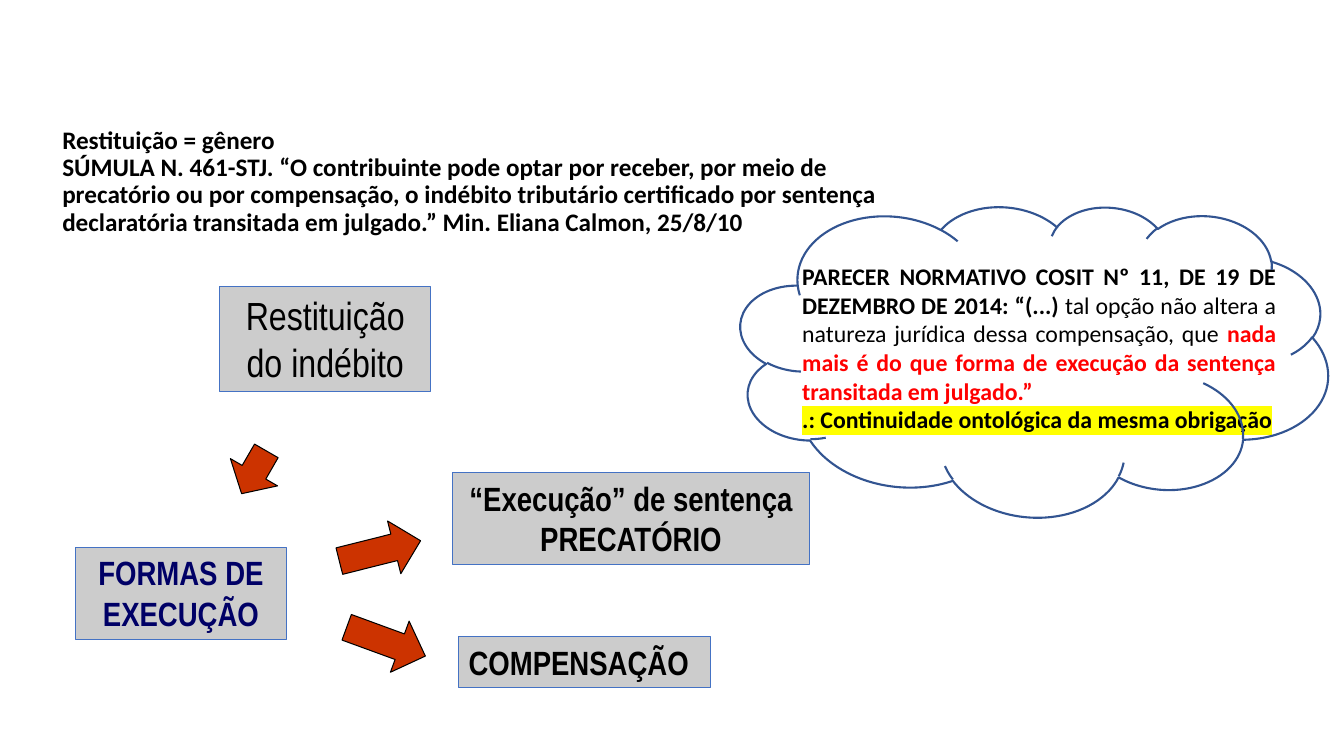
import pptx
import pptx.util
import pptx.dml.color
import pptx.enum.shapes
import pptx.enum.text
import pptx.oxml
import pptx.oxml.ns

Pt = pptx.util.Pt
SHAPE = pptx.enum.shapes.MSO_SHAPE
ALIGN = pptx.enum.text.PP_ALIGN
ANCHOR = pptx.enum.text.MSO_ANCHOR

BLACK, NAVY, RED, YELLOW = "000000", "000066", "FF0000", "FFFF00"
GREY, BLUE, RUST, CLOUD_BLUE = "CCCCCC", "4472C4", "CC3300", "325491"

# (left, top, width, height), text, size, colour, bold, alignment
BOXES = [
    ((157, 204.5, 150.5, 75), "Restituição do indébito", 28, BLACK, False, ALIGN.CENTER),
    ((54, 391, 150.5, 65.5), "FORMAS DE EXECUÇÃO", 24, NAVY, True, ALIGN.CENTER),
    ((323.3, 337.7, 254.9, 65.5), "“Execução” de sentença PRECATÓRIO", 24, BLACK, True, ALIGN.CENTER),
    ((327.6, 455, 180, 36), "COMPENSAÇÃO", 24, BLACK, True, ALIGN.LEFT),
]

# (left, top, width, height), clockwise rotation of a down arrow
ARROWS = [
    ((162, 319.7, 38.9, 35.3), 30),
    ((252, 363.6, 38.9, 59.8), 255.9),
    ((256.3, 428.4, 38.9, 59.8), 290.1),
]

TITLE_PLACE = (37.4, 77.8, 596.2, 104.4)
TITLE = (
    "Restituição = gênero\v"
    "SÚMULA N. 461-STJ. “O contribuinte pode optar por receber, por meio de "
    "precatório ou por compensação, o indébito tributário certificado por sentença "
    "declaratória transitada em julgado.” Min. Eliana Calmon, 25/8/10"
)

OPINION_PLACE = (565.9, 183.6, 352.8, 131)
# one list per paragraph: text, colour, bold, highlight
OPINION = [
    [
        ("PARECER NORMATIVO COSIT Nº 11, DE 19 DE DEZEMBRO DE 2014: “(...) ", BLACK, True, None),
        ("tal opção não altera a natureza jurídica dessa compensação, que ", BLACK, False, None),
        ("nada mais é do que forma de execução da sentença transitada em julgado.”", RED, True, None),
    ],
    [(".: Continuidade ontológica da mesma obrigação", BLACK, True, YELLOW)],
]

CLOUD_PLACE = (527.8, 143.3, 421.2, 225.4)


def rgb(hex_colour):
    return pptx.dml.color.RGBColor.from_string(hex_colour)


def set_all(target, **values):
    for name, value in values.items():
        setattr(target, name, value)


def add_shape(kind, place, fill, line, weight, rotation=0):
    sp = s.shapes.add_shape(kind, *map(Pt, place))
    sp.shadow.inherit = False
    sp.rotation = rotation
    if fill:
        sp.fill.solid()
        sp.fill.fore_color.rgb = rgb(fill)
    else:
        sp.fill.background()
    sp.line.color.rgb = rgb(line)
    sp.line.width = Pt(weight)
    return sp


def add_run(p, text, font, size, colour, bold, highlight=None):
    p.add_run().text = text
    r = p.runs[-1]
    set_all(r.font, name=font, size=Pt(size), bold=bold)
    r.font.color.rgb = rgb(colour)
    if highlight:
        mark = pptx.oxml.parse_xml(
            f'<a:highlight {pptx.oxml.ns.nsdecls("a")}><a:srgbClr val="{highlight}"/></a:highlight>'
        )
        r.font.color  # the highlight element follows the fill
        r._r.rPr.find(pptx.oxml.ns.qn("a:solidFill")).addnext(mark)


def add_textbox(place, anchor):
    tf = s.shapes.add_textbox(*map(Pt, place)).text_frame
    set_all(tf, word_wrap=True, vertical_anchor=anchor)
    return tf


prs = pptx.Presentation()
set_all(prs, slide_width=Pt(960), slide_height=Pt(540))
s = prs.slides.add_slide(prs.slide_layouts[6])

for place, text, size, colour, bold, align in BOXES:
    tf = add_shape(SHAPE.RECTANGLE, place, GREY, BLUE, 0.75).text_frame
    set_all(tf, word_wrap=True, vertical_anchor=ANCHOR.TOP)
    p = tf.paragraphs[0]
    p.alignment = align
    add_run(p, text, "Arial Narrow", size, colour, bold)

for place, rotation in ARROWS:
    add_shape(SHAPE.DOWN_ARROW, place, RUST, BLACK, 0.75, rotation)

p = add_textbox(TITLE_PLACE, ANCHOR.MIDDLE).paragraphs[0]
p.line_spacing = 0.9
for i, line in enumerate(TITLE.split("\v")):
    if i:
        p.add_line_break()
    add_run(p, line, "Calibri", 18, BLACK, True)

tf = add_textbox(OPINION_PLACE, ANCHOR.TOP)
for i, runs in enumerate(OPINION):
    p = tf.add_paragraph() if i else tf.paragraphs[0]
    p.alignment = ALIGN.JUSTIFY
    for text, colour, bold, highlight in runs:
        add_run(p, text, "Calibri", 17, colour, bold, highlight)

add_shape(SHAPE.CLOUD, CLOUD_PLACE, None, CLOUD_BLUE, 1.5, 5)

prs.save("out.pptx")
